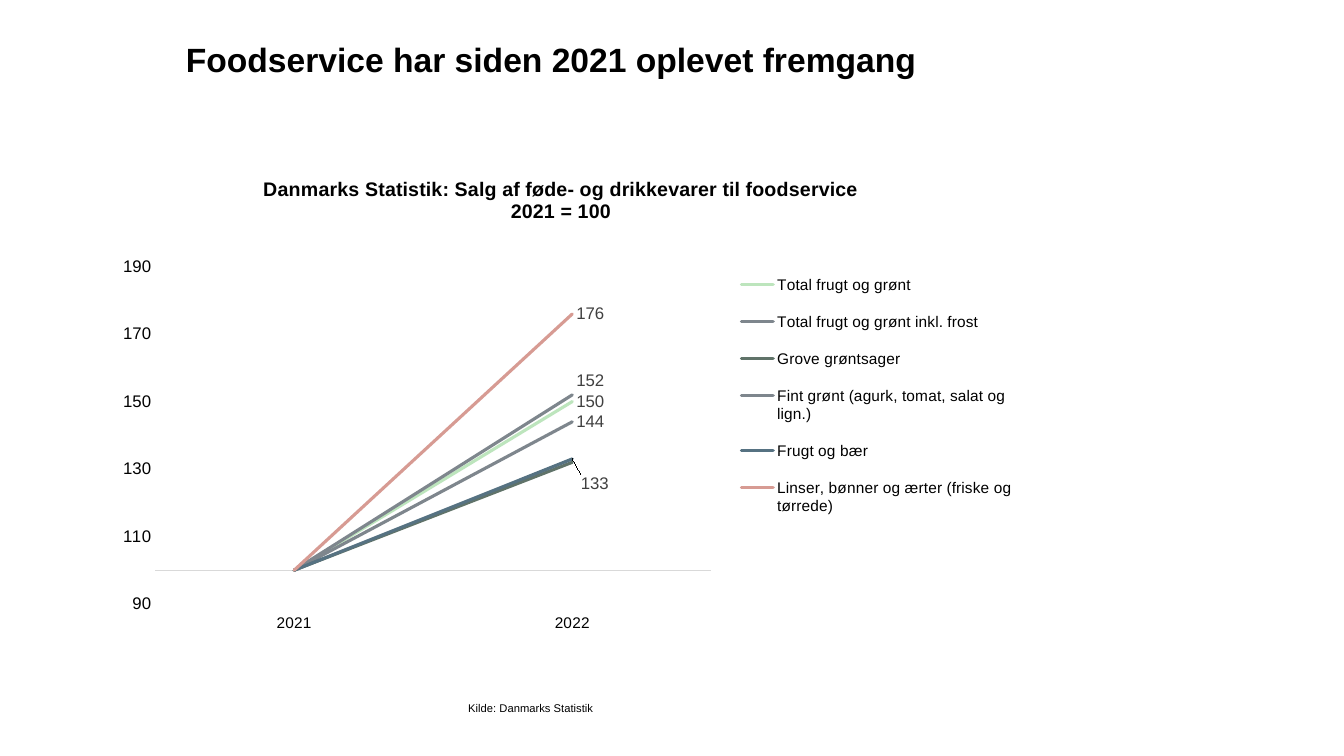
import pptx
import pptx.chart.data
import pptx.dml.color
import pptx.enum.chart
import pptx.enum.text
import pptx.oxml
import pptx.oxml.ns
import pptx.util

# Content
HEAD = "Foodservice har siden 2021 oplevet fremgang"
SOURCE = "Kilde: Danmarks Statistik"
TITLE = ["Danmarks Statistik: Salg af føde- og drikkevarer til foodservice", "2021 = 100"]
YEARS = ["2021", "2022"]
BASE = 100
# name, value in 2022, colour, label shift (None: no label)
GOODS = [
    ("Total frugt og grønt", 150, "BDE5BD", (0, 0)),
    ("Total frugt og grønt inkl. frost", 144, "7E868D", (0, 0)),
    ("Grove grøntsager", 132, "607369", None),
    ("Fint grønt (agurk, tomat, salat og lign.)", 152, "7E868D", (0, -0.03)),
    ("Frugt og bær", 133, "567282", (0.005, 0.05)),
    ("Linser, bønner og ærter (friske og tørrede)", 176, "D79B93", (0, 0)),
]

# Places: left, top, width, height in inches
HEAD_AT = (0.27, 0.34, 10.39, 0.5)
CHART_AT = (1.04, 1.53, 9.06, 4.83)
SOURCE_AT = (1.21, 6.96, 8.11, 0.13)

# Places inside the chart, as shares of its size
TITLE_IN = {"x": 0.17, "y": 0.04}
PLOT_IN = {"x": 0.055, "y": 0.162, "w": 0.609, "h": 0.762}
KEY_IN = {"x": 0.69, "y": 0.21, "w": 0.31, "h": 0.57}

C_NS = pptx.oxml.ns.nsdecls("c")
LEAD = (
    f'<c:extLst {C_NS}><c:ext uri="{{CE6537A1-D6FC-4f65-9D91-7224C49458BB}}" '
    'xmlns:c15="http://schemas.microsoft.com/office/drawing/2012/chart">'
    '<c15:showLeaderLines val="1"/></c:ext></c:extLst>'
)


def tint(code):
    return pptx.dml.color.RGBColor.from_string(code)


def style(font, size, code="000000", bold=False):
    font.name, font.size, font.bold = "Arial", pptx.util.Pt(size), bold
    font.color.rgb = tint(code)


def place(part, spot, index, inner=False):
    """Give a chart part a manual layout at the given child index."""
    for old in part.findall(pptx.oxml.ns.qn("c:layout")):
        part.remove(old)
    tags = '<c:layoutTarget val="inner"/>' if inner else ""
    if "w" in spot:
        tags += '<c:xMode val="edge"/><c:yMode val="edge"/>'
    elif part.tag == pptx.oxml.ns.qn("c:title"):
        tags += '<c:xMode val="edge"/><c:yMode val="edge"/>'
    tags += "".join(f'<c:{key} val="{val}"/>' for key, val in spot.items())
    part.insert(index, pptx.oxml.parse_xml(
        f"<c:layout {C_NS}><c:manualLayout>{tags}</c:manualLayout></c:layout>"))


def write(slide, spot, text, size, bold=False, inset=None):
    box = slide.shapes.add_textbox(*map(pptx.util.Inches, spot))
    frame = box.text_frame
    frame.word_wrap = True
    if inset is not None:
        frame.margin_left = frame.margin_right = inset
        frame.margin_top = frame.margin_bottom = inset
    para = frame.paragraphs[0]
    para.alignment = pptx.enum.text.PP_ALIGN.CENTER
    run = para.add_run()
    run.text = text
    style(run.font, size, bold=bold)


def draw_chart(slide):
    data = pptx.chart.data.CategoryChartData(number_format="0")
    data.categories = YEARS
    for name, value, *_ in GOODS:
        data.add_series(name, (BASE, value))
    chart = slide.shapes.add_chart(
        pptx.enum.chart.XL_CHART_TYPE.LINE, *map(pptx.util.Inches, CHART_AT), data).chart
    style(chart.font, 10)

    # Title
    frame = chart.chart_title.text_frame
    for row, text in enumerate(TITLE):
        para = frame.add_paragraph() if row else frame.paragraphs[0]
        run = para.add_run()
        run.text = text
        style(run.font, 14, bold=True)
    chart.chart_title.include_in_layout = False
    place(chart.chart_title._element, TITLE_IN, 1)

    # Legend and plot area
    chart.has_legend = True
    key = chart.legend
    key.position = pptx.enum.chart.XL_LEGEND_POSITION.RIGHT
    key.include_in_layout = False
    style(key.font, 11)
    place(key._element, KEY_IN, 1)
    place(chart._chartSpace.chart.plotArea, PLOT_IN, 0, inner=True)

    # Axes
    years, index = chart.category_axis, chart.value_axis
    for axis, size in ((years, 11), (index, 12)):
        axis.major_tick_mark = axis.minor_tick_mark = pptx.enum.chart.XL_TICK_MARK.NONE
        axis.has_major_gridlines = False
        style(axis.tick_labels.font, size)
    years.tick_label_position = pptx.enum.chart.XL_TICK_LABEL_POSITION.LOW
    years.format.line.color.rgb = tint("D9D9D9")
    years.format.line.width = pptx.util.Pt(0.75)
    index.format.line.fill.background()
    index.minimum_scale, index.maximum_scale, index.major_unit = 90, 200, 20
    index.crosses_at = BASE
    index.tick_labels.number_format = "0"
    index.tick_labels.number_format_is_linked = False

    # Lines and end labels
    for line, (_, _, code, shift) in zip(chart.plots[0].series, GOODS):
        line.smooth = False
        line.marker.style = pptx.enum.chart.XL_MARKER_STYLE.NONE
        line.format.line.color.rgb = tint(code)
        line.format.line.width = pptx.util.Pt(2.25)
        line._element.spPr.find(pptx.oxml.ns.qn("a:ln")).set("cap", "rnd")
        if shift is None:
            continue
        label = line.points[1].data_label
        style(label.font, 12, "404040")
        label.position = pptx.enum.chart.XL_LABEL_POSITION.RIGHT
        line.data_labels.show_value = False
        if any(shift):
            group = line.data_labels._element
            place(group.find(pptx.oxml.ns.qn("c:dLbl")), dict(zip("xy", shift)), 1)
            group.append(pptx.oxml.parse_xml(LEAD))


def main():
    deck = pptx.Presentation()
    deck.slide_width, deck.slide_height = pptx.util.Inches(13.33), pptx.util.Inches(7.5)
    slide = deck.slides.add_slide(deck.slide_layouts[6])
    draw_chart(slide)
    write(slide, HEAD_AT, HEAD, 24, bold=True)
    write(slide, SOURCE_AT, SOURCE, 8, inset=0)
    deck.save("out.pptx")


if __name__ == "__main__":
    main()
